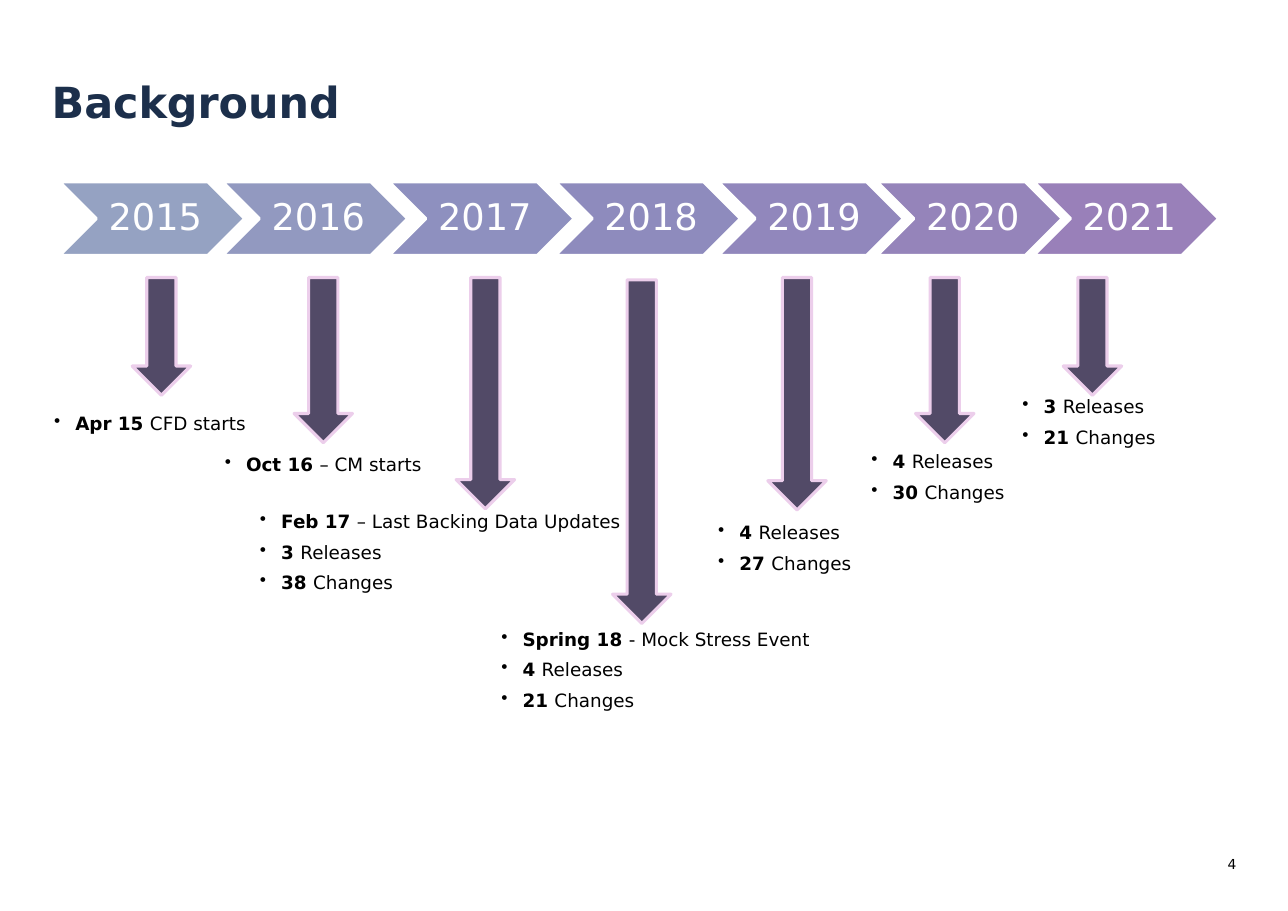
"""Build the Background slide: a yearly timeline with arrows to short lists."""
from lxml.etree import SubElement
from pptx import Presentation
from pptx.dml.color import RGBColor
from pptx.enum.shapes import MSO_SHAPE
from pptx.enum.text import MSO_ANCHOR, MSO_AUTO_SIZE, PP_ALIGN
from pptx.oxml.ns import qn
from pptx.util import Pt

FONT = "DejaVu Sans"
WHITE = RGBColor(0xFF, 0xFF, 0xFF)
BLACK = RGBColor(0x00, 0x00, 0x00)
NAVY = RGBColor(0x1C, 0x2F, 0x4B)
PLUM = RGBColor(0x52, 0x4A, 0x67)
PINK = RGBColor(0xEC, 0xCE, 0xEB)
YEAR_FILLS = [
    RGBColor(0x95, 0xA2, 0xC2), RGBColor(0x92, 0x99, 0xC0),
    RGBColor(0x8E, 0x90, 0xBF), RGBColor(0x8E, 0x8B, 0xBD),
    RGBColor(0x91, 0x87, 0xBC), RGBColor(0x95, 0x84, 0xBA),
    RGBColor(0x99, 0x80, 0xB9),
]
YEAR_LEFTS = [38.9, 145.4, 254.2, 362.9, 469.4, 573.1, 675.4]
ARROWS = [
    (86.4, 181.4, 77), (192.2, 181.4, 108), (298.1, 181.4, 151.2),
    (400.3, 182.9, 224.6), (501.8, 181.4, 151.9), (598.3, 181.4, 108),
    (694.8, 181.4, 77),
]
LISTS = [
    (35.3, 262.8, 149.8, 20.9, 21, [("Apr 15 ", "CFD starts")]),
    (146.9, 289.4, 140.4, 18.7, 21, [("Oct 16 ", "– CM starts")]),
    (169.9, 333.4, 239.8, 55.4, None,
     [("Feb 17 ", "– Last Backing Data Updates"), ("3 ", "Releases"), ("38 ", "Changes")]),
    (327.6, 410.4, 205.2, 55.4, None,
     [("Spring 18 ", "- Mock Stress Event"), ("4 ", "Releases"), ("21 ", "Changes")]),
    (469.4, 340.6, 105.1, 35.3, None, [("4 ", "Releases"), ("27 ", "Changes")]),
    (569.5, 294.5, 94.3, 35.3, None, [("4 ", "Releases"), ("30 ", "Changes")]),
    (668.2, 258.5, 103.7, 35.3, None, [("3 ", "Releases"), ("21 ", "Changes")]),
]


def add_block(kind, left, top, width, height, fill, line):
    sp = s.shapes.add_shape(kind, Pt(left), Pt(top), Pt(width), Pt(height))
    sp.shadow.inherit = False
    sp.fill.solid()
    sp.fill.fore_color.rgb = fill
    sp.line.color.rgb = line
    sp.line.width = Pt(2)
    return sp


def set_frame(tf):
    tf.margin_left = tf.margin_top = tf.margin_right = tf.margin_bottom = 0
    tf.word_wrap = True
    tf.auto_size = MSO_AUTO_SIZE.NONE
    tf.vertical_anchor = MSO_ANCHOR.TOP


prs = Presentation()
prs.slide_width, prs.slide_height = Pt(841.68), Pt(595.44)
s = prs.slides.add_slide(prs.slide_layouts[5])

for i, (left, fill) in enumerate(zip(YEAR_LEFTS, YEAR_FILLS)):
    sp = add_block(MSO_SHAPE.CHEVRON, left, 118.8, 121, 48.2, fill, WHITE)
    tf = sp.text_frame
    tf.margin_left, tf.margin_right = Pt(7.2), Pt(2.88)
    tf.margin_top = tf.margin_bottom = Pt(2.88)
    tf.word_wrap = False
    tf.vertical_anchor = MSO_ANCHOR.MIDDLE
    tf.text = str(2015 + i)
    p = tf.paragraphs[0]
    p.alignment = PP_ALIGN.CENTER
    p.line_spacing = 0.9
    f = p.runs[0].font
    f.name, f.size, f.color.rgb = FONT, Pt(24), WHITE

title = s.shapes.title
title.left, title.top, title.width, title.height = Pt(33.8), Pt(49.7), Pt(774), Pt(33.8)
tf = title.text_frame
set_frame(tf)
tf.text = "Background"
p = tf.paragraphs[0]
p.alignment = PP_ALIGN.LEFT
f = p.runs[0].font
f.name, f.size, f.bold, f.color.rgb = FONT, Pt(28), True, NAVY

tf = s.shapes.add_textbox(Pt(779.8), Pt(559.4), Pt(28.1), Pt(14.4)).text_frame
set_frame(tf)
tf.text = "4"
p = tf.paragraphs[0]
p.alignment = PP_ALIGN.RIGHT
f = p.runs[0].font
f.name, f.size, f.color.rgb = FONT, Pt(9), BLACK

for left, top, height in ARROWS:
    add_block(MSO_SHAPE.DOWN_ARROW, left, top, 38.2, height, PLUM, PINK)

for left, top, width, height, spacing, items in LISTS:
    tf = s.shapes.add_textbox(Pt(left), Pt(top), Pt(width), Pt(height)).text_frame
    set_frame(tf)
    for i, (lead, rest) in enumerate(items):
        p = tf.add_paragraph() if i else tf.paragraphs[0]
        pPr = p._p.get_or_add_pPr()
        pPr.set("marL", str(Pt(13.9)))
        pPr.set("indent", str(Pt(-13.9)))
        SubElement(pPr, qn("a:buChar"), char="•")
        p.space_after = Pt(5.6)
        if spacing:
            p.line_spacing = Pt(spacing)
        for text, bold in ((lead, True), (rest, False)):
            r = p.add_run()
            r.text = text
            f = r.font
            f.name, f.size, f.bold, f.color.rgb = FONT, Pt(12), bold, BLACK

prs.save("out.pptx")
